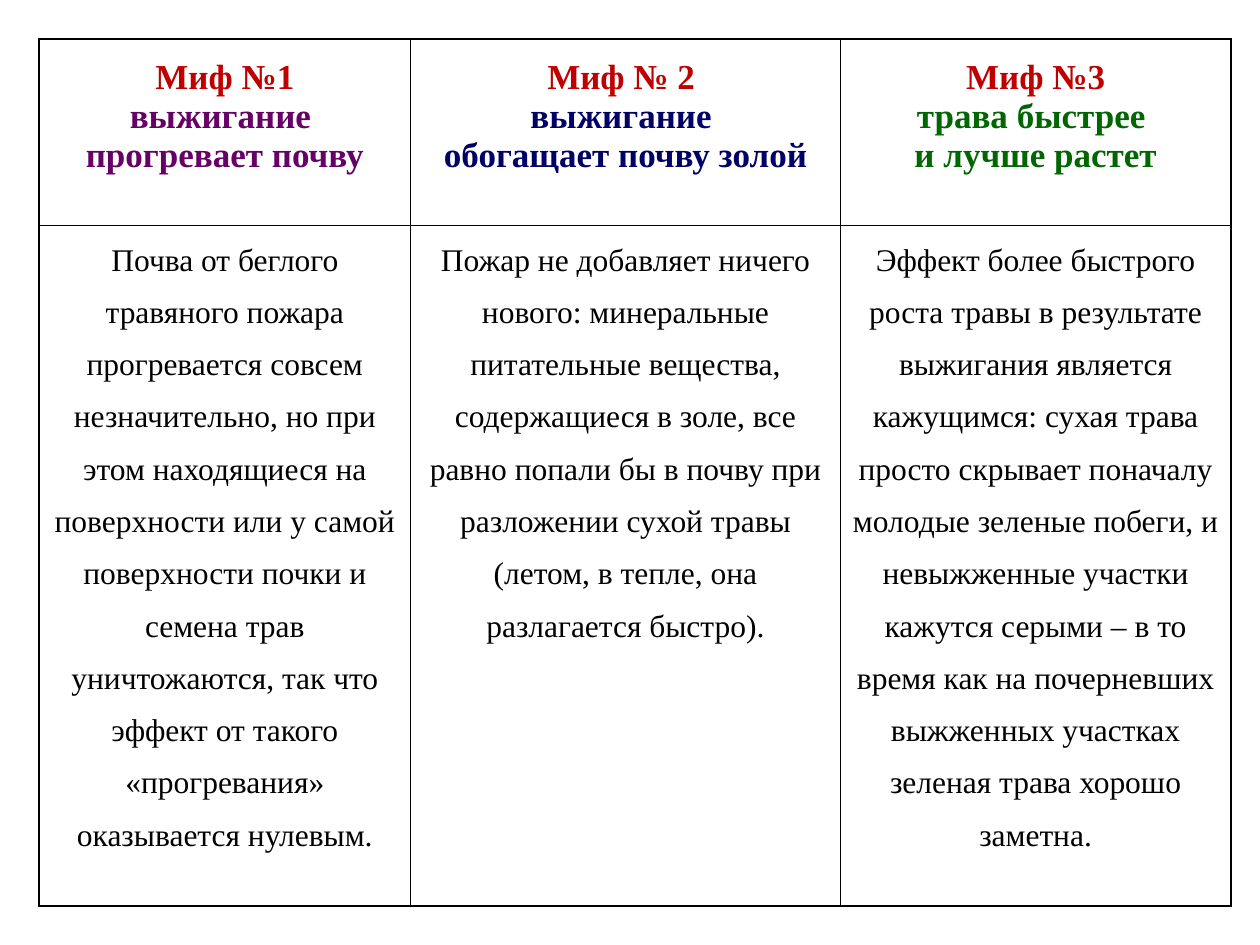
from dataclasses import dataclass

from lxml.etree import SubElement
from pptx import Presentation
from pptx.dml.color import RGBColor
from pptx.enum.text import PP_ALIGN
from pptx.oxml.ns import qn
from pptx.util import Inches, Pt

HEADING = {"name": "Times New Roman", "size": Pt(20), "bold": True}
BODY = {"name": "Times New Roman", "size": Pt(18), "bold": False}
MARGINS = {"margin_left": Inches(0.07), "margin_right": Inches(0.07),
           "margin_top": 0, "margin_bottom": 0}
BLACK = "000000"
RED = "C00000"


@dataclass
class Myth:
    name: str
    claim: tuple[str, str]
    color: str
    answer: str
    width: float


MYTHS = [
    Myth("Миф №1", ("выжигание ", "прогревает почву"), "660066",
         "Почва от беглого травяного пожара прогревается совсем незначительно, "
         "но при этом находящиеся на поверхности или у самой поверхности почки "
         "и семена трав уничтожаются, так что эффект от такого «прогревания» "
         "оказывается нулевым.", 2.95),
    Myth("Миф № 2 ", ("выжигание ", "обогащает почву золой"), "000066",
         "Пожар не добавляет ничего нового: минеральные питательные вещества, "
         "содержащиеся в золе, все равно попали бы в почву при разложении сухой "
         "травы (летом, в тепле, она разлагается быстро).", 3.41),
    Myth("Миф №3", ("трава быстрее ", "и лучше растет"), "006600",
         "Эффект более быстрого роста травы в результате выжигания является "
         "кажущимся: сухая трава просто скрывает поначалу молодые зеленые побеги, "
         "и невыжженные участки кажутся серыми – в то время как на почерневших "
         "выжженных участках зеленая трава хорошо заметна.", 3.1),
]
ROW_HEIGHTS = (1.48, 5.4)


def apply(target, values: dict) -> None:
    for name, value in values.items():
        setattr(target, name, value)


def rgb(color: str) -> RGBColor:
    return RGBColor.from_string(color)


def format_cell(cell) -> None:
    """Set margins, black one-point borders and no fill."""
    apply(cell, MARGINS)
    properties = cell._tc.get_or_add_tcPr()
    for side in ("a:lnL", "a:lnR", "a:lnT", "a:lnB"):
        line = SubElement(properties, qn(side), w=str(Pt(1)))
        SubElement(SubElement(line, qn("a:solidFill")), qn("a:srgbClr"), val=BLACK)
    cell.fill.background()


def write_cell(cell, lines: list[tuple[str, str]], font: dict) -> None:
    """Write (text, color) lines, the first one with wide line spacing."""
    format_cell(cell)
    for index, (text, color) in enumerate(lines):
        frame = cell.text_frame
        para = frame.add_paragraph() if index else frame.paragraphs[0]
        para.alignment = PP_ALIGN.CENTER
        para.line_spacing = 1.0 if index else 1.5
        span = para.add_run()
        span.text = text
        apply(span.font, font)
        span.font.color.rgb = rgb(color)


def add_myth_table(page) -> None:
    width = sum(myth.width for myth in MYTHS)
    table = page.shapes.add_table(
        len(ROW_HEIGHTS), len(MYTHS), Inches(0.31), Inches(0.31),
        Inches(width), Inches(sum(ROW_HEIGHTS))).table
    apply(table, {"first_row": False, "horz_banding": False})
    for row, height in zip(table.rows, ROW_HEIGHTS):
        row.height = Inches(height)
    for index, myth in enumerate(MYTHS):
        table.columns[index].width = Inches(myth.width)
        heading = [(myth.name, RED)] + [(line, myth.color) for line in myth.claim]
        write_cell(table.cell(0, index), heading, HEADING)
        write_cell(table.cell(1, index), [(myth.answer, BLACK)], BODY)


def main() -> None:
    deck = Presentation()
    apply(deck, {"slide_width": Inches(10), "slide_height": Inches(7.5)})
    page = deck.slides.add_slide(deck.slide_layouts[6])
    add_myth_table(page)
    deck.save("out.pptx")


if __name__ == "__main__":
    main()
